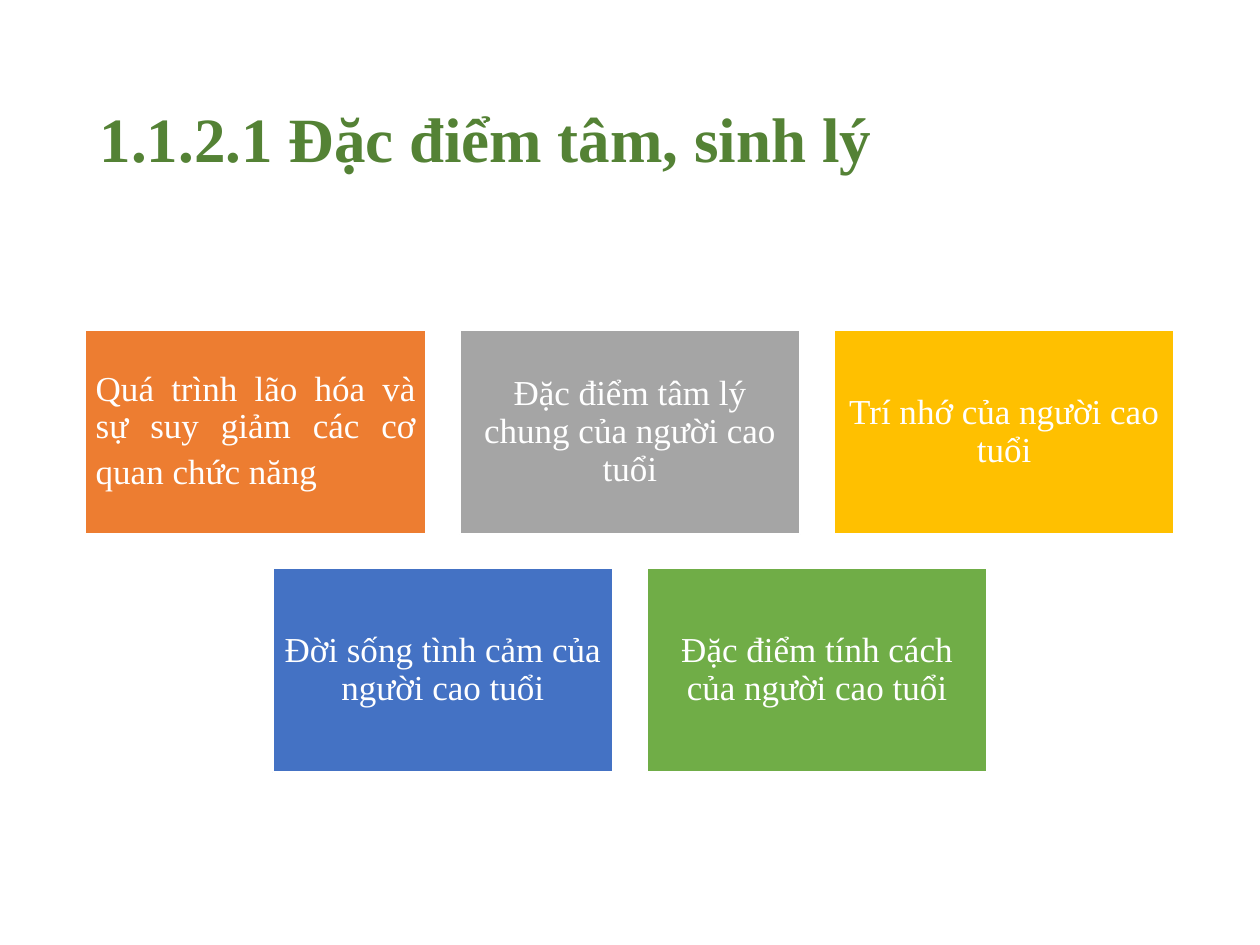
import pptx
import pptx.dml.color
import pptx.enum.shapes
import pptx.enum.text
import pptx.util
from pptx.util import Inches

FONT = "Times New Roman"
SLIDE_WIDTH = 10
CARD_WIDTH, CARD_HEIGHT, GAP = 2.7, 1.62, 0.27
FIRST_ROW_TOP = 2.62
ALIGN = pptx.enum.text.PP_ALIGN

CARD_ROWS = [
    [
        ("Quá trình lão hóa và sự suy giảm các cơ quan chức năng", "ED7D31", ALIGN.JUSTIFY),
        ("Đặc điểm tâm lý chung của người cao tuổi", "A5A5A5", ALIGN.CENTER),
        ("Trí nhớ của người cao tuổi", "FFC000", ALIGN.CENTER),
    ],
    [
        ("Đời sống tình cảm của người cao tuổi", "4472C4", ALIGN.CENTER),
        ("Đặc điểm tính cách của người cao tuổi", "70AD47", ALIGN.CENTER),
    ],
]


def color(hex_string):
    return pptx.dml.color.RGBColor.from_string(hex_string)


def format_text(text_frame, size, hex_color, alignment, bold=False):
    text_frame.word_wrap = True
    text_frame.auto_size = pptx.enum.text.MSO_AUTO_SIZE.NONE
    text_frame.vertical_anchor = pptx.enum.text.MSO_ANCHOR.MIDDLE
    paragraph = text_frame.paragraphs[0]
    paragraph.alignment = alignment
    paragraph.line_spacing = 0.9
    for run in paragraph.runs:
        run.font.name = FONT
        run.font.size = pptx.util.Pt(size)
        run.font.bold = bold
        run.font.color.rgb = color(hex_color)


def set_title(slide, text):
    title = slide.shapes.title
    title.left, title.top = Inches(0.69), Inches(0.4)
    title.width, title.height = Inches(8.62), Inches(1.45)
    title.text_frame.text = text
    format_text(title.text_frame, 36, "548235", ALIGN.LEFT, bold=True)


def add_card(slide, left, top, text, fill, alignment):
    card = slide.shapes.add_shape(
        pptx.enum.shapes.MSO_SHAPE.RECTANGLE,
        Inches(left), Inches(top), Inches(CARD_WIDTH), Inches(CARD_HEIGHT),
    )
    card.shadow.inherit = False
    card.fill.solid()
    card.fill.fore_color.rgb = color(fill)
    card.line.color.rgb = color("FFFFFF")
    card.line.width = pptx.util.Pt(1)
    text_frame = card.text_frame
    text_frame.margin_left = text_frame.margin_right = Inches(0.08)
    text_frame.margin_top = text_frame.margin_bottom = Inches(0.08)
    text_frame.text = text
    format_text(text_frame, 20, "FFFFFF", alignment)
    return card


def add_tall_space(card):
    """End the text with a larger space, which makes its last line taller."""
    run = card.text_frame.paragraphs[0].add_run()
    run.text = " "
    run.font.name = "Calibri"
    run.font.size = pptx.util.Pt(25)


def add_card_rows(slide):
    """Centre each row of cards on the slide."""
    cards = []
    for row_index, row in enumerate(CARD_ROWS):
        row_width = len(row) * (CARD_WIDTH + GAP) - GAP
        row_left = (SLIDE_WIDTH - row_width) / 2
        top = FIRST_ROW_TOP + row_index * (CARD_HEIGHT + GAP)
        for column, (text, fill, alignment) in enumerate(row):
            left = row_left + column * (CARD_WIDTH + GAP)
            cards.append(add_card(slide, left, top, text, fill, alignment))
    return cards


def main():
    presentation = pptx.Presentation()
    presentation.slide_width = Inches(SLIDE_WIDTH)
    presentation.slide_height = Inches(7.5)
    slide = presentation.slides.add_slide(presentation.slide_layouts[5])
    set_title(slide, "1.1.2.1 Đặc điểm tâm, sinh lý")
    cards = add_card_rows(slide)
    add_tall_space(cards[0])
    presentation.save("out.pptx")


if __name__ == "__main__":
    main()
